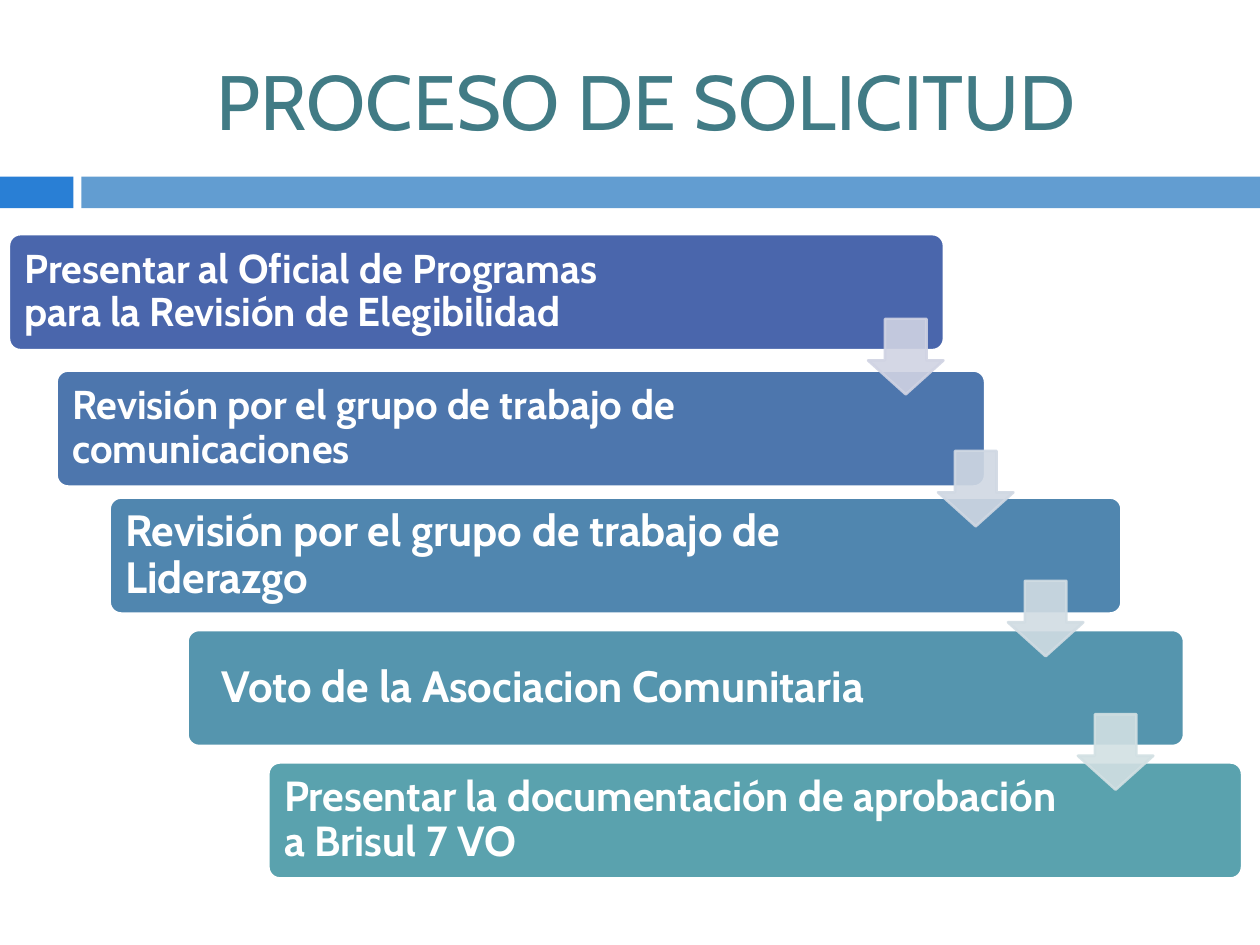
"""Build the slide with the five steps of the application process."""
from dataclasses import dataclass

from lxml import etree
from pptx import Presentation
from pptx.dml.color import RGBColor
from pptx.enum.shapes import MSO_SHAPE
from pptx.enum.text import MSO_ANCHOR, MSO_AUTO_SIZE, PP_ALIGN
from pptx.oxml.ns import qn
from pptx.shapes.autoshape import Shape
from pptx.slide import Slide
from pptx.text.text import _Paragraph
from pptx.util import Cm, Pt

RECT = MSO_SHAPE.RECTANGLE
ROUND = MSO_SHAPE.ROUNDED_RECTANGLE
DOWN = MSO_SHAPE.DOWN_ARROW
MIDDLE = MSO_ANCHOR.MIDDLE
CENTER = PP_ALIGN.CENTER
LEFT = PP_ALIGN.LEFT
FIXED = MSO_AUTO_SIZE.NONE


@dataclass(frozen=True)
class Theme:
    font: str = "Cabin"
    title: str = "417B85"
    light: str = "FFFFFF"
    tab: str = "297FD5"
    band: str = "629DD1"
    head: float = 44
    edge: float = 1.5
    alpha: int = 90000


@dataclass(frozen=True)
class Box:
    left: float
    top: float
    width: float
    height: float


@dataclass(frozen=True)
class Step:
    left: float
    top: float
    width: float
    fill: str
    size: float
    lines: tuple[str, ...]
    inset: float = 0.25


@dataclass(frozen=True)
class Arrow:
    top: float
    fill: str


THEME = Theme()
STEP_HEIGHT = 2.34
STEP_RIGHT = 3.3
ARROW_SIDE = 1.52
ARROW_LEFT = 17.5
ARROW_SHIFT = 1.41

STEPS = (
    Step(0.18, 4.72, 18.85, "4A66AC", 23,
         ("Presentar al Oficial de Programas", "para la Revisión de Elegibilidad")),
    Step(1.14, 7.47, 18.72, "4D76AD", 23,
         ("Revisión por el grupo de trabajo de comunicaciones",)),
    Step(2.21, 10.03, 20.4, "5086AF", 25,
         ("Revisión por el grupo de trabajo de Liderazgo",)),
    Step(3.78, 12.7, 20.09, "5595AE", 25,
         ("Voto de la Asociacion Comunitaria",), 0.62),
    Step(5.41, 15.37, 19.63, "5AA2AE", 24,
         ("Presentar la documentación de aprobación a Brisul 7 VO",)),
)
ARROWS = (
    Arrow(6.43, "D0D3E3"),
    Arrow(9.09, "D0D8E3"),
    Arrow(11.71, "D1DCE3"),
    Arrow(14.4, "D2E0E3"),
)


def paint(slide: Slide, kind: MSO_SHAPE, box: Box, fill: str, edge: str | None = None) -> Shape:
    """Add a flat shape with a solid fill and an optional outline."""
    shape = slide.shapes.add_shape(
        kind, Cm(box.left), Cm(box.top), Cm(box.width), Cm(box.height))
    shape.shadow.inherit = False
    shape.fill.solid()
    shape.fill.fore_color.rgb = RGBColor.from_string(fill)
    if edge:
        shape.line.color.rgb = RGBColor.from_string(edge)
        shape.line.width = Pt(THEME.edge)
    else:
        shape.line.fill.background()
    return shape


def write(para: _Paragraph, text: str, size: float, color: str, bold: bool) -> None:
    """Add one styled run to a paragraph."""
    run = para.add_run()
    run.text = text
    run.font.name = THEME.font
    run.font.size = Pt(size)
    run.font.bold = bold
    run.font.color.rgb = RGBColor.from_string(color)


def draw_title(slide: Slide, text: str) -> None:
    """Place and fill the title."""
    title = slide.shapes.title
    title.left, title.top, title.width, title.height = Cm(1.7), Cm(0.64), Cm(22.66), Cm(2.74)
    frame = title.text_frame
    frame.auto_size = FIXED
    frame.vertical_anchor = MIDDLE
    para = frame.paragraphs[0]
    para.alignment = CENTER
    write(para, text, THEME.head, THEME.title, False)


def draw_step(slide: Slide, step: Step) -> None:
    """Draw one bar with its label."""
    box = Box(step.left, step.top, step.width, STEP_HEIGHT)
    shape = paint(slide, ROUND, box, step.fill, THEME.light)
    shape.adjustments[0] = 0.1
    frame = shape.text_frame
    frame.word_wrap = True
    frame.vertical_anchor = MIDDLE
    frame.margin_left, frame.margin_right = Cm(step.inset), Cm(STEP_RIGHT)
    frame.margin_top = frame.margin_bottom = Cm(0.25)
    para = frame.paragraphs[0]
    para.alignment = LEFT
    para.line_spacing = 0.9
    for index, line in enumerate(step.lines):
        if index:
            para.add_line_break()
        write(para, line, step.size, THEME.light, True)


def draw_arrow(slide: Slide, index: int, arrow: Arrow) -> None:
    """Draw one translucent arrow between two bars."""
    left = ARROW_LEFT + index * ARROW_SHIFT
    box = Box(left, arrow.top, ARROW_SIDE, ARROW_SIDE)
    shape = paint(slide, DOWN, box, arrow.fill, arrow.fill)
    shape.adjustments[0] = 0.55
    shape.adjustments[1] = 0.45
    for color in shape.element.spPr.iter(qn("a:srgbClr")):
        etree.SubElement(color, qn("a:alpha"), val=str(THEME.alpha))


def main() -> None:
    """Build and save the slide."""
    deck = Presentation()
    deck.slide_width, deck.slide_height = Cm(25.4), Cm(19.05)
    slide = deck.slides.add_slide(deck.slide_layouts[5])
    paint(slide, RECT, Box(0, 3.56, 1.48, 0.64), THEME.tab)
    paint(slide, RECT, Box(1.64, 3.56, 23.76, 0.64), THEME.band)
    draw_title(slide, "PROCESO DE SOLICITUD")
    for step in STEPS:
        draw_step(slide, step)
    for index, arrow in enumerate(ARROWS):
        draw_arrow(slide, index, arrow)
    deck.save("out.pptx")


if __name__ == "__main__":
    main()
